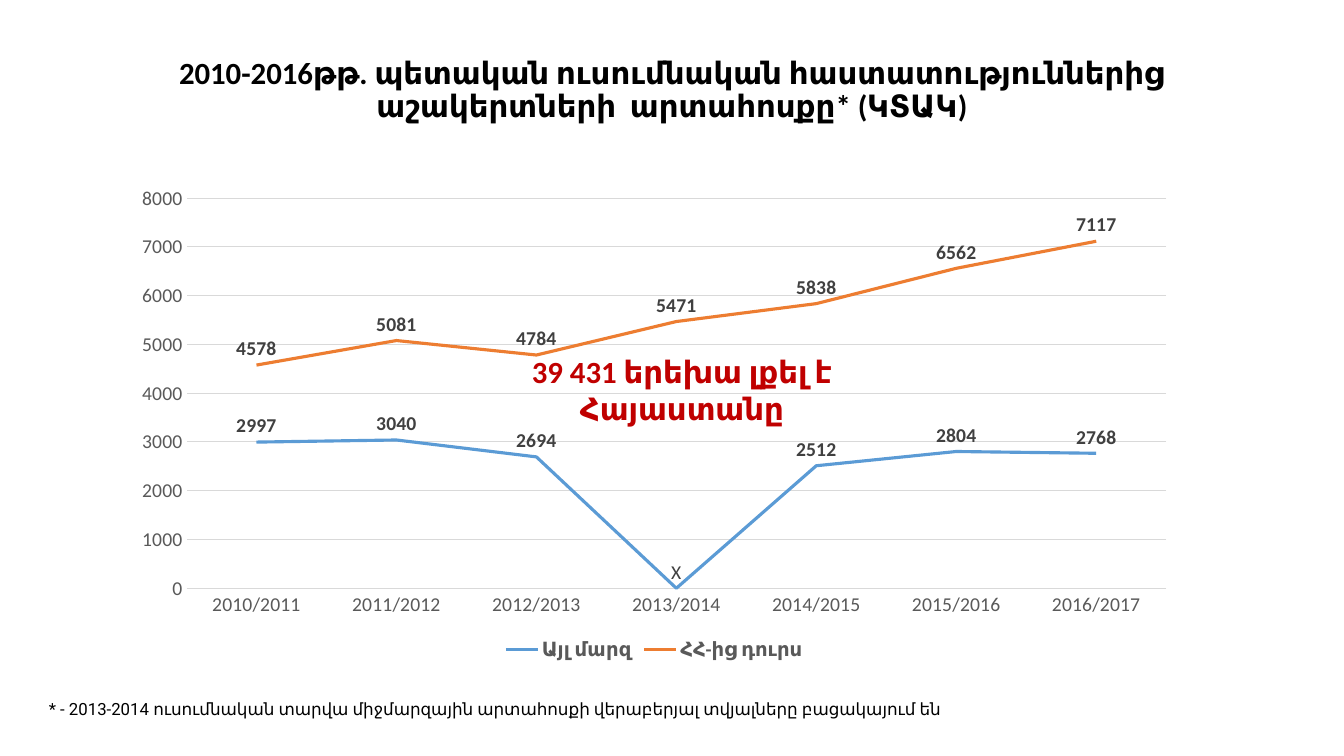
"""Build a slide with a line chart of pupils leaving state schools."""
import pptx
import pptx.chart.data
import pptx.dml.color
import pptx.enum.chart
import pptx.enum.text
import pptx.util

PX = 9525
YEARS = [f"{y}/{y + 1}" for y in range(2010, 2017)]
SERIES = [
    ("Այլ մարզ", "5B9BD5", (2997, 3040, 2694, 0, 2512, 2804, 2768)),
    ("ՀՀ-ից դուրս", "ED7D31", (4578, 5081, 4784, 5471, 5838, 6562, 7117)),
]
MISSING_YEAR = 3


def px(*lengths):
    return [pptx.util.Emu(n * PX) for n in lengths]


def rgb(value):
    return pptx.dml.color.RGBColor.from_string(value)


def style_font(font, size, color, bold=False, name="Calibri"):
    font.name = name
    font.size = pptx.util.Pt(size)
    font.bold = bold
    font.color.rgb = rgb(color)


def style_line(line, color, width):
    line.color.rgb = rgb(color)
    line.width = pptx.util.Pt(width)


def write(tf, text, size, color, bold=False, name="Calibri", align="LEFT"):
    tf.word_wrap = True
    p = tf.paragraphs[0]
    p.alignment = getattr(pptx.enum.text.PP_ALIGN, align)
    r = p.add_run()
    r.text = text
    style_font(r.font, size, color, bold, name)
    return p


def add_title(s, box, text):
    sp = s.shapes.title
    sp.left, sp.top, sp.width, sp.height = px(*box)
    sp.text_frame.vertical_anchor = pptx.enum.text.MSO_ANCHOR.MIDDLE
    p = write(sp.text_frame, text, 22, "000000", True, align="CENTER")
    p.line_spacing = 0.9


def add_text(s, box, text, size, color, **style):
    tf = s.shapes.add_textbox(*px(*box)).text_frame
    write(tf, text, size, color, **style)
    tf.auto_size = pptx.enum.text.MSO_AUTO_SIZE.SHAPE_TO_FIT_TEXT


def style_axes(chart):
    for axis in (chart.category_axis, chart.value_axis):
        axis.major_tick_mark = pptx.enum.chart.XL_TICK_MARK.NONE
        axis.minor_tick_mark = pptx.enum.chart.XL_TICK_MARK.NONE
        style_font(axis.tick_labels.font, 14, "595959")
    style_line(chart.category_axis.format.line, "D9D9D9", 0.75)
    values = chart.value_axis
    values.format.line.fill.background()
    style_line(values.major_gridlines.format.line, "D9D9D9", 0.75)
    values.minimum_scale, values.maximum_scale, values.major_unit = 0, 8000, 1000


def style_series(series, color):
    series.smooth = False
    series.marker.style = pptx.enum.chart.XL_MARKER_STYLE.NONE
    style_line(series.format.line, color, 2.25)
    labels = series.data_labels
    labels.show_value = True
    labels.position = pptx.enum.chart.XL_LABEL_POSITION.ABOVE
    style_font(labels.font, 14, "404040", True)


def add_line_chart(s, box):
    data = pptx.chart.data.CategoryChartData()
    data.categories = YEARS
    for name, _, values in SERIES:
        data.add_series(name, values)
    kind = pptx.enum.chart.XL_CHART_TYPE.LINE
    chart = s.shapes.add_chart(kind, *px(*box), data).chart
    style_font(chart.font, 10, "000000")
    chart.has_title = False
    chart.plots[0].vary_by_categories = False
    chart.has_legend = True
    chart.legend.position = pptx.enum.chart.XL_LEGEND_POSITION.BOTTOM
    chart.legend.include_in_layout = False
    style_font(chart.legend.font, 14, "595959", True)
    style_axes(chart)
    for series, (_, color, _) in zip(chart.plots[0].series, SERIES):
        style_series(series, color)
    label = chart.plots[0].series[0].points[MISSING_YEAR].data_label
    write(label.text_frame, "X", 14, "404040", align="CENTER")
    label.position = pptx.enum.chart.XL_LABEL_POSITION.ABOVE


def main():
    prs = pptx.Presentation()
    prs.slide_width, prs.slide_height = px(1280, 720)
    s = prs.slides.add_slide(prs.slide_layouts[5])
    add_title(s, (88, 38, 1104, 97),
              "2010-2016թթ. պետական ուսումնական հաստատություններից "
              "աշակերտների  արտահոսքը* (ԿՏԱԿ)")
    add_text(s, (37, 661, 1093, 29),
             "* - 2013-2014 ուսումնական տարվա միջմարզային արտահոսքի "
             "վերաբերյալ տվյալները բացակայում են",
             12, "000000", name="Roboto")
    add_line_chart(s, (115, 168, 1016, 466))
    add_text(s, (497, 331, 305, 81), "39 431 երեխա լքել է Հայաստանը",
             22, "C00000", bold=True, align="CENTER")
    prs.save("out.pptx")


if __name__ == "__main__":
    main()
